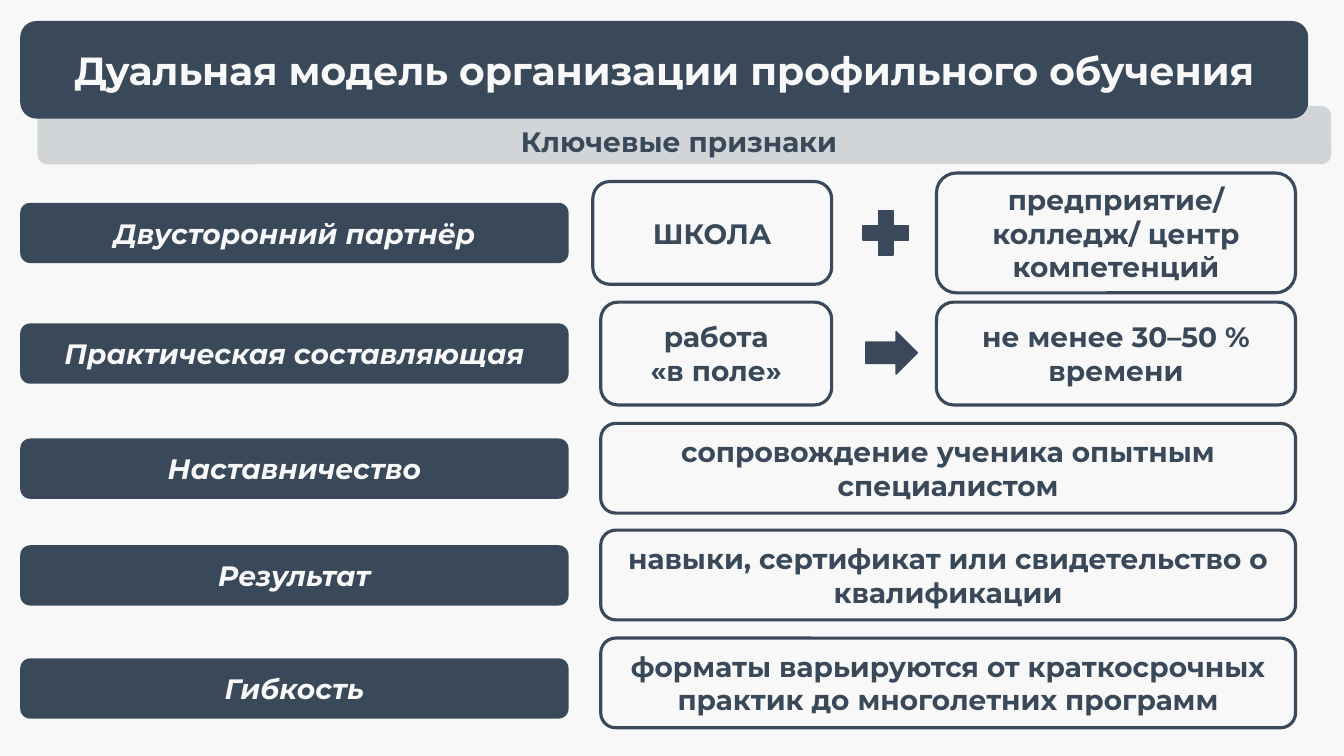
from lxml import etree
from pptx import Presentation
from pptx.dml.color import RGBColor
from pptx.enum.shapes import MSO_SHAPE
from pptx.enum.text import MSO_ANCHOR, MSO_AUTO_SIZE, PP_ALIGN
from pptx.oxml.ns import qn
from pptx.util import Cm, Pt

ROUND, PLUS, ARROW = MSO_SHAPE.ROUNDED_RECTANGLE, MSO_SHAPE.MATH_PLUS, MSO_SHAPE.RIGHT_ARROW
FONT, NAVY, PALE = "Montserrat", "394959", "F8F8F8"

# Content
TITLE = "Дуальная модель организации профильного обучения"
SUBTITLE = "Ключевые признаки"

# Layout in cm; boxes are (left, width, height, text), centred on the row's axis
LABEL_X, LABEL_W, LABEL_H = 0.51, 13.82, 1.52
LEFT, RIGHT_COL, RIGHT_EDGE = 15.14, 23.6, 32.65
RIGHT_W, FULL_W = RIGHT_EDGE - RIGHT_COL, RIGHT_EDGE - LEFT
PAIR_H, FULL_H = 2.59, 2.26

# Rows: label, label axis, box axis, boxes
ROWS = [
    ("Двусторонний партнёр", 5.87, 5.87,
     [(14.94, 6.02, PAIR_H, "ШКОЛА"),
      (RIGHT_COL, RIGHT_W, 3.02, "предприятие/ колледж/ центр компетенций")]),
    ("Практическая составляющая", 8.91, 8.91,
     [(LEFT, 5.82, PAIR_H, "работа\n«в поле»"),
      (RIGHT_COL, RIGHT_W, PAIR_H, "не менее 30–50 % времени")]),
    ("Наставничество", 11.81, 11.8,
     [(LEFT, FULL_W, FULL_H, "сопровождение ученика опытным специалистом")]),
    ("Результат", 14.5, 14.49,
     [(LEFT, FULL_W, FULL_H, "навыки, сертификат или свидетельство о квалификации")]),
    ("Гибкость", 17.35, 17.21,
     [(LEFT, FULL_W, FULL_H,
       "форматы варьируются от краткосрочных практик до многолетних программ")]),
]
# Signs between paired boxes: kind, left, axis, width, height
SIGNS = [(PLUS, 21.54, 5.87, 1.57, 1.52), (ARROW, 21.82, 8.89, 1.3, 1.07)]


def rgb(value):
    return RGBColor.from_string(value)


def write(sp, text, size, color, italic=False):
    tf = sp.text_frame
    tf.word_wrap = True
    tf.auto_size = MSO_AUTO_SIZE.NONE
    tf.vertical_anchor = MSO_ANCHOR.MIDDLE
    tf.text = text
    for p in tf.paragraphs:
        p.alignment = PP_ALIGN.CENTER
        p.font.name, p.font.size = FONT, Pt(size)
        p.font.bold, p.font.italic = True, italic
        p.font.color.rgb = rgb(color)


def add_shape(s, kind, x, y, w, h, fill=None, line=None):
    sp = s.shapes.add_shape(kind, Cm(x), Cm(y), Cm(w), Cm(h))
    sp.shadow.inherit = False
    if fill:
        sp.fill.solid()
        sp.fill.fore_color.rgb = rgb(fill)
    else:
        sp.fill.background()
    if line:
        sp.line.color.rgb, sp.line.width = rgb(NAVY), Pt(line)
    else:
        sp.line.fill.background()
    return sp


prs = Presentation()
prs.slide_width, prs.slide_height = Cm(33.87), Cm(19.05)
s = prs.slides.add_slide(prs.slide_layouts[5])
s.background.fill.solid()
s.background.fill.fore_color.rgb = rgb(PALE)

# Translucent subtitle band
band = add_shape(s, ROUND, 0.94, 2.67, 32.61, 1.47, fill=NAVY)
color = band.element.spPr.find(qn("a:solidFill"))[0]
etree.SubElement(color, qn("a:alpha"), val="20000")
subtitle = s.shapes.add_textbox(Cm(2.65), Cm(3), Cm(28.93), Cm(1.11))
write(subtitle, SUBTITLE, 20, NAVY)

# Title on its dark panel, placed in front of the band
panel = (0.51, 0.53, 32.46, 2.46)
add_shape(s, ROUND, *panel, fill=NAVY)
title = s.shapes.title
title.left, title.top, title.width, title.height = map(Cm, panel)
write(title, TITLE, 28, PALE)
title.element.getparent().append(title.element)

# Feature rows
for label, label_axis, box_axis, boxes in ROWS:
    sp = add_shape(s, ROUND, LABEL_X, label_axis - LABEL_H / 2, LABEL_W, LABEL_H, fill=NAVY)
    write(sp, label, 20, PALE, italic=True)
    for x, w, h, text in boxes:
        sp = add_shape(s, ROUND, x, box_axis - h / 2, w, h, line=2.25)
        write(sp, text, 20, NAVY)

# Plus and arrow
for kind, x, axis, w, h in SIGNS:
    add_shape(s, kind, x, axis - h / 2, w, h, fill=NAVY, line=1)

prs.save("out.pptx")
